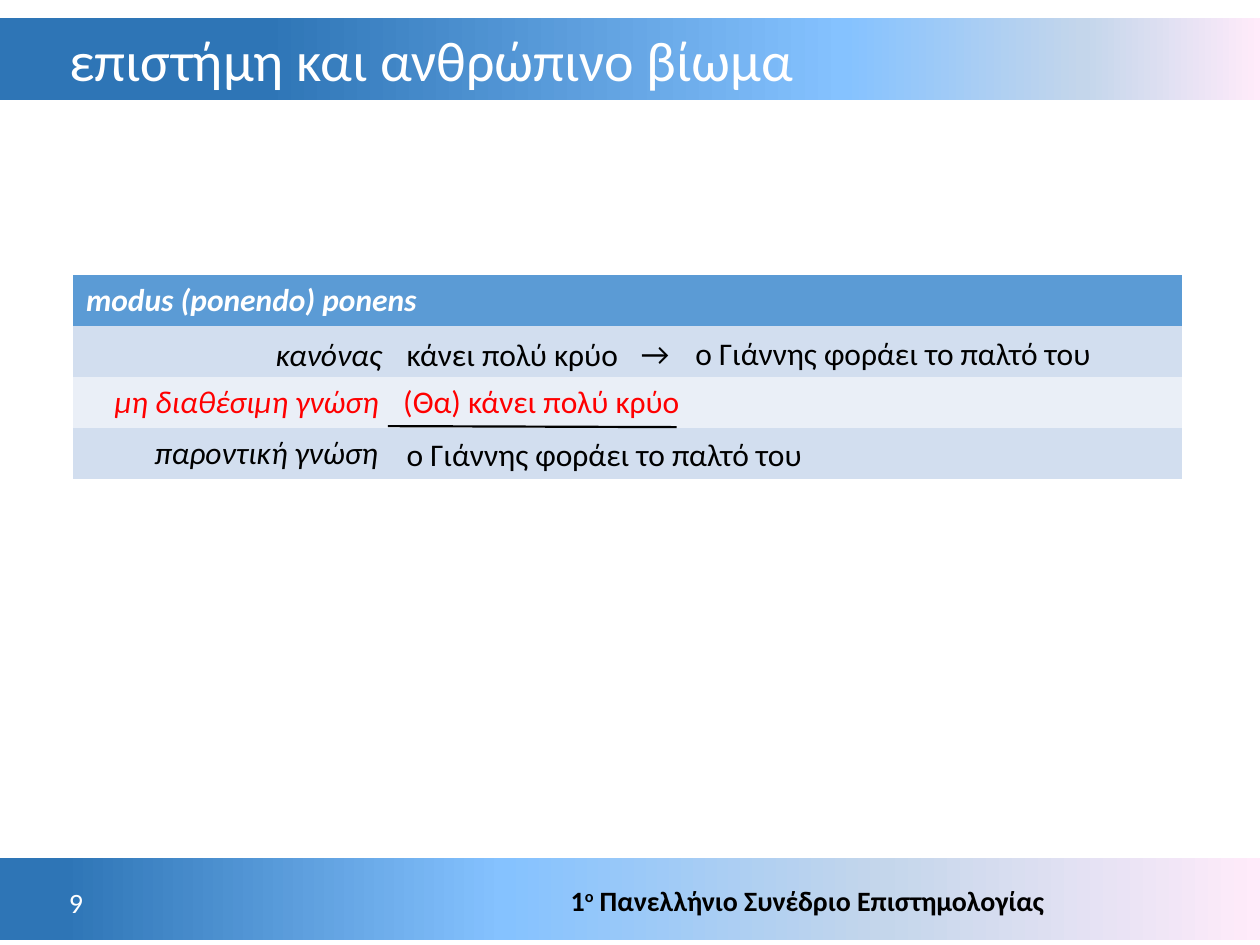
from copy import deepcopy

from pptx import Presentation
from pptx.dml.color import RGBColor
from pptx.enum import shapes, text
from pptx.oxml import ns, xmlchemy
from pptx.util import Cm, Pt

WHITE = RGBColor(0xFF, 0xFF, 0xFF)
BLACK = RGBColor(0, 0, 0)
RED = RGBColor(0xFF, 0, 0)
HEADER_BLUE = RGBColor(0x5B, 0x9B, 0xD5)
ROW_DARK = RGBColor(0xD2, 0xDE, 0xEF)
ROW_LIGHT = RGBColor(0xEA, 0xEF, 0xF7)
BAND_COLOURS = [RGBColor(0x2E, 0x75, 0xB6), RGBColor(0x85, 0xC2, 0xFF),
                RGBColor(0xC4, 0xD6, 0xEB), RGBColor(0xFF, 0xEB, 0xFA)]
NO_STYLE = "{2D5ABB26-0587-4C30-8999-92F81FD0307C}"


def format_text(frame, size, colour, bold=False, italic=False):
    for span in frame.paragraphs[0].runs:
        span.font.name = "Calibri"
        span.font.size = Pt(size)
        span.font.color.rgb = colour
        span.font.bold = bold
        span.font.italic = italic


def add_text(left, top, width, height, words, size=18, colour=BLACK,
             italic=False, wrap=False):
    box = page.shapes.add_textbox(Cm(left), Cm(top), Cm(width), Cm(height))
    frame = box.text_frame
    frame.text = words
    frame.word_wrap = wrap
    format_text(frame, size, colour, italic=italic)
    return frame


deck = Presentation()
deck.slide_width, deck.slide_height = Cm(25.4), Cm(19.05)
page = deck.slides.add_slide(deck.slide_layouts[5])

# Gradient bands behind the title and the footer
for order, (top, stops) in enumerate([(17.3, (5, 40, 70, 100)),
                                      (0.36, (21, 67, 86, 100))]):
    band = page.shapes.add_shape(shapes.MSO_SHAPE.RECTANGLE,
                                 0, Cm(top), deck.slide_width, Cm(1.65))
    band.shadow.inherit = False
    band.line.fill.background()
    band.fill.gradient()
    band.fill.gradient_angle = 0
    stop_list = band._element.spPr.find(".//" + ns.qn("a:gsLst"))
    for _ in range(2):
        stop_list.append(deepcopy(stop_list[0]))
    for stop, place, colour in zip(band.fill.gradient_stops, stops, BAND_COLOURS):
        stop.position = place / 100
        stop.color.rgb = colour
    page.shapes._spTree.insert(2 + order, band._element)

# Title
title = page.shapes.title
title.left, title.top, title.width, title.height = Cm(1.14), Cm(0.43), Cm(22.53), Cm(1.7)
frame = title.text_frame
frame.text = "επιστήμη και ανθρώπινο βίωμα"
frame.word_wrap = True
frame.auto_size = text.MSO_AUTO_SIZE.NONE
frame.vertical_anchor = text.MSO_ANCHOR.MIDDLE
frame.paragraphs[0].alignment = text.PP_ALIGN.LEFT
frame.paragraphs[0].line_spacing = 0.9
format_text(frame, 32, WHITE)

# Slide number
number = add_text(1.14, 17.65, 1.19, 1.09, "9", 16, WHITE, wrap=True)
number.vertical_anchor = text.MSO_ANCHOR.MIDDLE

# Table of the inference
graphic = page.shapes.add_table(4, 2, Cm(1.48), Cm(5.54), Cm(22.35), Cm(4.12))
table = graphic.table
graphic._element.find(".//" + ns.qn("a:tableStyleId")).text = NO_STYLE
table.columns[0].width, table.columns[1].width = Cm(6.4), Cm(15.95)
for row, colour in zip(table.rows, [HEADER_BLUE, ROW_DARK, ROW_LIGHT, ROW_DARK]):
    row.height = Cm(1.03)
    for cell in row.cells:
        cell.fill.solid()
        cell.fill.fore_color.rgb = colour
header, conclusion = table.cell(0, 0), table.cell(3, 0)
header.merge(table.cell(0, 1))
header.text_frame.text = "modus (ponendo) ponens"
format_text(header.text_frame, 18, WHITE, bold=True, italic=True)
conclusion.text_frame.text = "παροντική γνώση"
conclusion.text_frame.paragraphs[0].alignment = text.PP_ALIGN.RIGHT
format_text(conclusion.text_frame, 18, BLACK, italic=True)

# Statements laid over the table
for left, top, width, words, colour, italic in [
    (12.67, 6.6, 1.14, "→", BLACK, False),
    (7.95, 6.62, 4.83, "κάνει πολύ κρύο", BLACK, False),
    (13.77, 6.6, 8.59, "ο Γιάννης φοράει το παλτό του", BLACK, False),
    (7.95, 8.64, 8.59, "ο Γιάννης φοράει το παλτό του", BLACK, False),
    (2.06, 7.57, 5.92, "μη διαθέσιμη γνώση", RED, True),
    (7.88, 7.57, 6.12, "(Θα) κάνει πολύ κρύο", RED, False),
    (5.31, 6.63, 2.69, "κανόνας", BLACK, True),
]:
    add_text(left, top, width, 1.02, words, colour=colour, italic=italic)

# Inference line
rule = page.shapes.add_connector(shapes.MSO_CONNECTOR.STRAIGHT,
                                 Cm(7.82), Cm(8.59), Cm(13.64), Cm(8.61))
rule.line.color.rgb = BLACK
rule.line.width = Pt(1.25)
rule._element.spPr.append(xmlchemy.OxmlElement("a:effectLst"))

# Conference footer
footer = add_text(2.87, 17.6, 18.44, 1.09, "1", wrap=True)
footer.vertical_anchor = text.MSO_ANCHOR.MIDDLE
para = footer.paragraphs[0]
para.alignment = text.PP_ALIGN.RIGHT
for words in ("ο", " Πανελλήνιο Συνέδριο Επιστημολογίας"):
    para.add_run().text = words
format_text(footer, 16, BLACK, bold=True)
para.runs[1].font._element.set("baseline", "30000")

deck.save("out.pptx")
